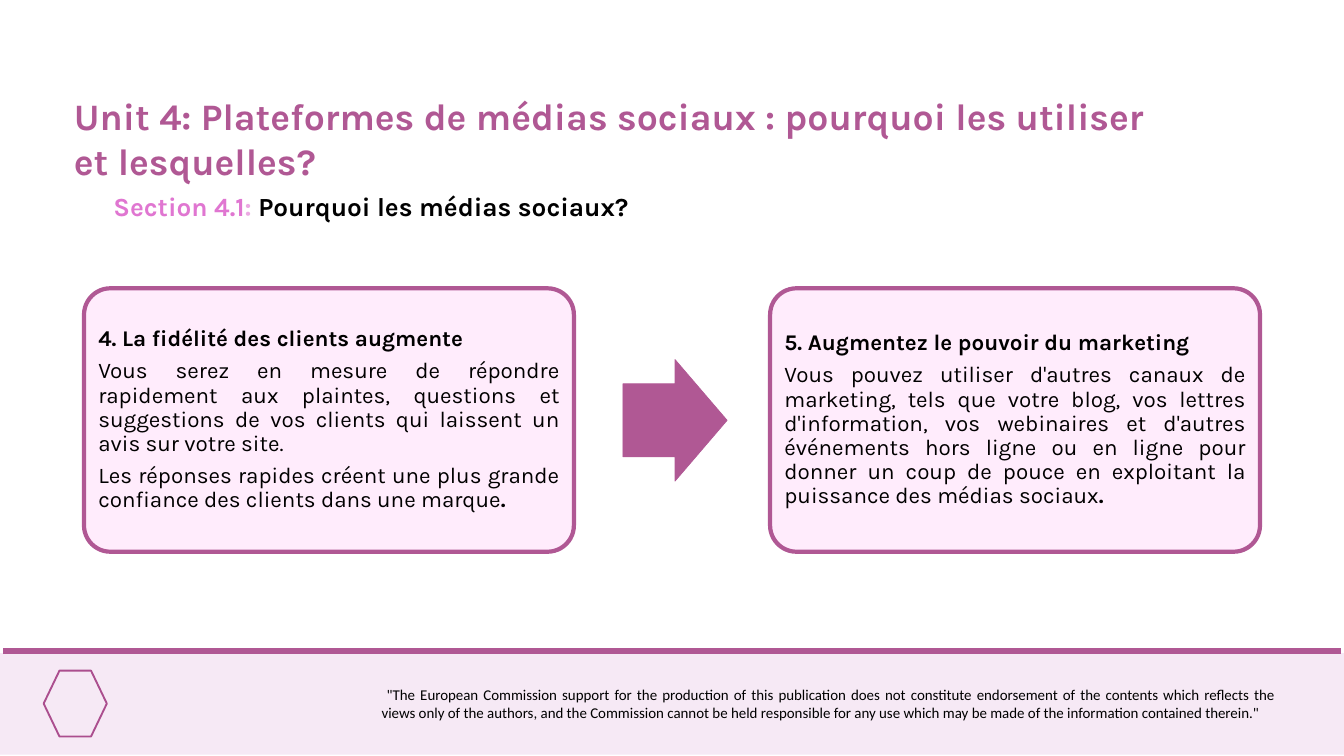
from dataclasses import dataclass

from lxml.etree import SubElement
from pptx import Presentation
from pptx.dml.color import RGBColor
from pptx.enum.shapes import MSO_CONNECTOR, MSO_SHAPE
from pptx.enum.text import MSO_ANCHOR, MSO_AUTO_SIZE, PP_ALIGN
from pptx.oxml.ns import qn
from pptx.shapes.autoshape import Shape
from pptx.slide import Slide
from pptx.text.text import TextFrame, _Paragraph
from pptx.util import Inches, Pt

PLUM = RGBColor(0xB0, 0x58, 0x94)
LOGO_PLUM = RGBColor(0xAB, 0x4E, 0x8E)
ORCHID = RGBColor(0xE0, 0x76, 0xD1)
PALE_ORCHID = RGBColor(0xEC, 0xAA, 0xE3)
CARD_PINK = RGBColor(0xFF, 0xEC, 0xFC)
BAND_PINK = RGBColor(0xF6, 0xE9, 0xF5)
BLACK = RGBColor(0, 0, 0)

CARD_TOP, CARD_WIDTH, CARD_HEIGHT = 4.29, 7.29, 3.92


@dataclass(frozen=True)
class Span:
    text: str
    bold: bool = False
    color: RGBColor = BLACK


@dataclass(frozen=True)
class Card:
    left: float
    paragraphs: list[list[Span]]


CARDS = [
    Card(1.25, [
        [Span("4. La fidélité des clients augmente", True)],
        [Span("Vous serez en mesure de répondre rapidement aux plaintes, questions et "
              "suggestions de vos clients qui laissent un avis sur votre site.")],
        [Span("Les réponses rapides créent une plus grande confiance des clients "
              "dans une marque"), Span(". ", True)],
    ]),
    Card(11.46, [
        [Span("5. Augmentez le pouvoir du marketing", True)],
        [Span("Vous pouvez utiliser d'autres canaux de marketing, tels que votre blog, "
              "vos lettres d'information, vos webinaires et d'autres événements hors "
              "ligne ou en ligne pour donner un coup de pouce en exploitant la "
              "puissance des médias sociaux"), Span(".", True)],
    ]),
]

SECTION = [
    Span("Section 4.1", True, ORCHID),
    Span(": ", True, PALE_ORCHID),
    Span("Pourquoi les médias sociaux?", True),
]

TITLE = "Unit 4: Plateformes de médias sociaux : pourquoi les utiliser et lesquelles?"

DISCLAIMER = (
    " \"The European Commission support for the production of this publication does not "
    "constitute endorsement of the contents which reflects the views only of the authors, "
    "and the Commission cannot be held responsible for any use which may be made of the "
    "information contained therein.\""
)


def write(p: _Paragraph, spans: list[Span], size: float, font: str = "Karla",
          align: PP_ALIGN = PP_ALIGN.LEFT) -> None:
    p.alignment = align
    p.font.name = font
    p.font.size = Pt(size)
    for span in spans:
        r = p.add_run()
        r.text = span.text
        r.font.bold = span.bold
        r.font.color.rgb = span.color


def add_shape(s: Slide, kind: MSO_SHAPE, left: float, top: float, width: float,
              height: float, fill: RGBColor | None = None,
              line: RGBColor | None = None, weight: float = 0.75) -> Shape:
    sp = s.shapes.add_shape(kind, Inches(left), Inches(top), Inches(width), Inches(height))
    sp.shadow.inherit = False
    if fill is None:
        sp.fill.background()
    else:
        sp.fill.solid()
        sp.fill.fore_color.rgb = fill
    if line is None:
        sp.line.fill.background()
    else:
        sp.line.color.rgb = line
        sp.line.width = Pt(weight)
    return sp


def add_text_box(s: Slide, left: float, top: float, width: float, height: float) -> TextFrame:
    sp = s.shapes.add_textbox(Inches(left), Inches(top), Inches(width), Inches(height))
    tf = sp.text_frame
    tf.word_wrap = True
    return tf


def add_title(s: Slide) -> None:
    sp = s.shapes.title
    sp.left, sp.top = Inches(1), Inches(1.34)
    sp.width, sp.height = Inches(16.67), Inches(1.45)
    tf = sp.text_frame
    tf.auto_size = MSO_AUTO_SIZE.NONE
    tf.vertical_anchor = MSO_ANCHOR.TOP
    write(tf.paragraphs[0], [Span(TITLE, True, PLUM)], 40)


def add_card(s: Slide, card: Card) -> None:
    sp = add_shape(s, MSO_SHAPE.ROUNDED_RECTANGLE, card.left, CARD_TOP,
                   CARD_WIDTH, CARD_HEIGHT, CARD_PINK, PLUM, 4.5)
    sp.adjustments[0] = 0.1
    tf = sp.text_frame
    tf.word_wrap = True
    tf.vertical_anchor = MSO_ANCHOR.MIDDLE
    tf.margin_left = tf.margin_right = tf.margin_top = tf.margin_bottom = Inches(0.1)
    for i, spans in enumerate(card.paragraphs):
        p = tf.add_paragraph() if i else tf.paragraphs[0]
        p.line_spacing = 0.9
        p.space_after = Pt(8.4)
        write(p, spans, 24, align=PP_ALIGN.JUSTIFY)


def add_footer(s: Slide) -> None:
    add_shape(s, MSO_SHAPE.RECTANGLE, 0, 9.72, 20, 1.51, BAND_PINK)
    rule = s.shapes.add_connector(MSO_CONNECTOR.STRAIGHT, Inches(0.05), Inches(9.69),
                                  Inches(19.95), Inches(9.69))
    rule.line.color.rgb = PLUM
    rule.line.width = Pt(6.75)
    SubElement(rule._element.spPr, qn("a:effectLst"))
    add_shape(s, MSO_SHAPE.HEXAGON, 0.65, 9.98, 0.94, 0.98, line=LOGO_PLUM, weight=2)
    tf = add_text_box(s, 5.58, 10.15, 13.5, 0.64)
    write(tf.paragraphs[0], [Span(DISCLAIMER)], 16, "Calibri", PP_ALIGN.JUSTIFY)


def main() -> None:
    prs = Presentation()
    prs.slide_width, prs.slide_height = Inches(20), Inches(11.25)
    s = prs.slides.add_slide(prs.slide_layouts[5])
    add_footer(s)
    add_title(s)
    write(add_text_box(s, 1.59, 2.79, 16.41, 0.57).paragraphs[0], SECTION, 28)
    for card in CARDS:
        add_card(s, card)
    arrow = add_shape(s, MSO_SHAPE.RIGHT_ARROW, 9.27, 5.35, 1.55, 1.81, PLUM, PLUM)
    arrow.adjustments[0] = 0.6
    arrow.adjustments[1] = 0.5
    prs.save("out.pptx")


if __name__ == "__main__":
    main()
